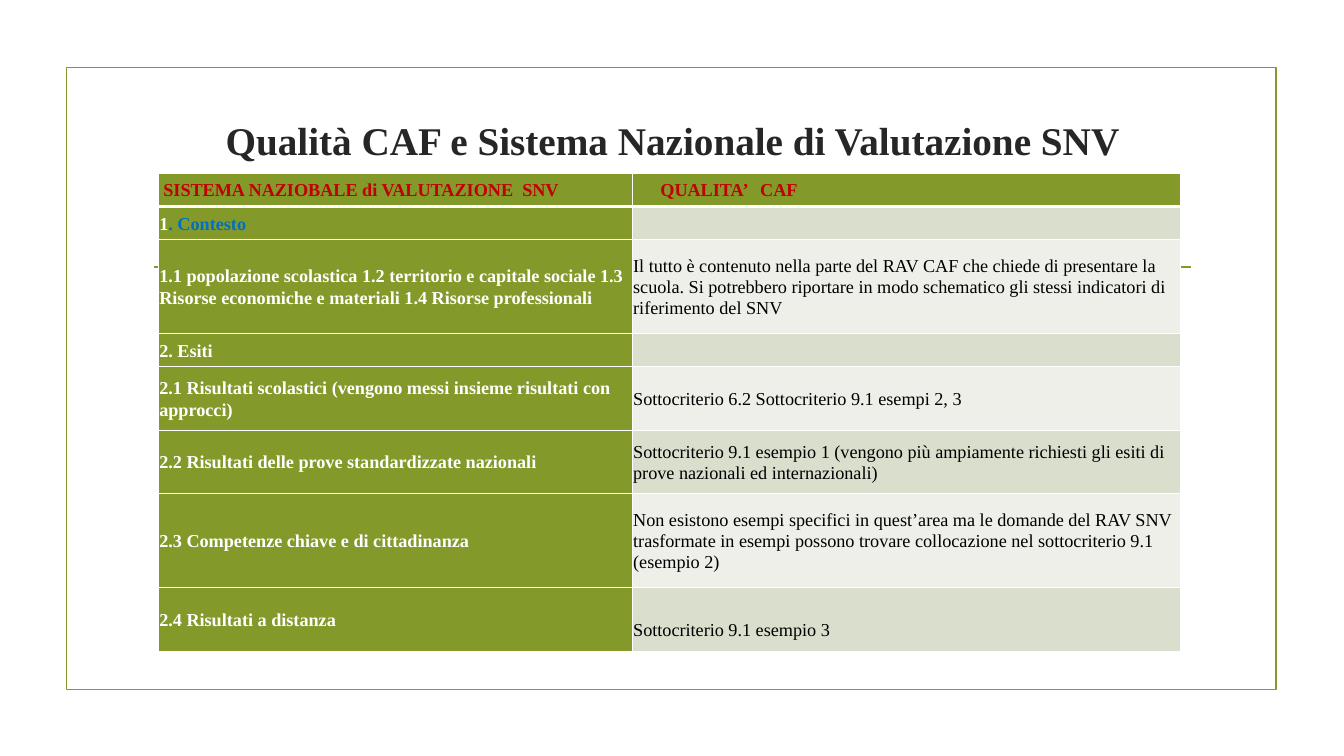
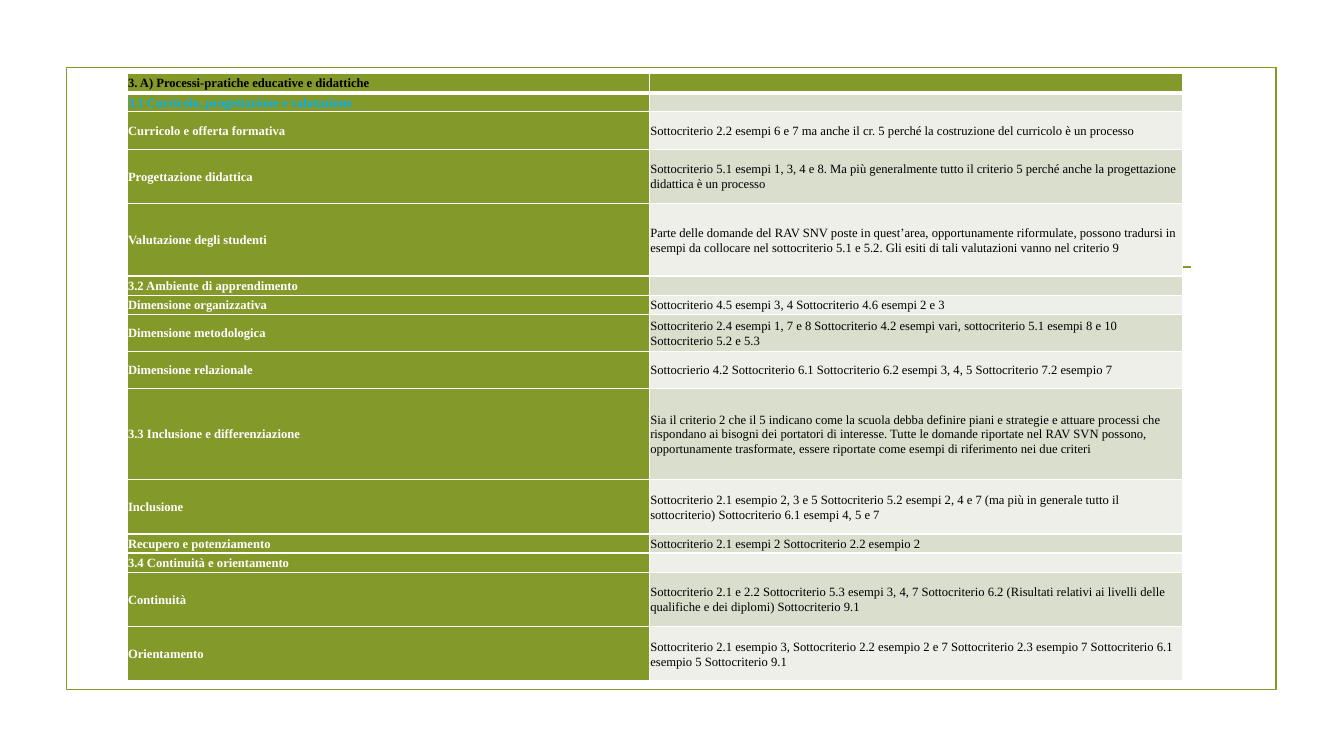
from lxml.etree import SubElement
from pptx import Presentation
from pptx.dml.color import RGBColor
from pptx.enum.shapes import MSO_CONNECTOR, MSO_SHAPE
from pptx.enum.text import MSO_ANCHOR, MSO_AUTO_SIZE, PP_ALIGN
from pptx.oxml.ns import qn
from pptx.util import Inches, Pt

COLORS = {
    "green": "83992A",
    "band_dark": "D9DECD",
    "band_light": "EDEFE8",
    "title": "262626",
    "white": "FFFFFF",
    "black": "000000",
    "red": "C00000",
    "blue": "0070C0",
    "cyan": "00B0F0",
}
FONT = "Times New Roman"
CELL_MARGIN = 0.01
TITLE_ONLY, BLANK = 5, 6

# Each row: height, label, value. A list holds (text, colour) runs.
CONTEXT_ROWS = [
    (0.33, [("SISTEMA NAZIOBALE di VALUTAZIONE\tSNV", "red")], [("QUALITA’\tCAF", "red")]),
    (0.33, [("1", "white"), (". Contesto", "blue")], ""),
    (0.93, "1.1 popolazione scolastica 1.2 territorio e capitale sociale 1.3 Risorse "
           "economiche e materiali 1.4 Risorse professionali",
     "Il tutto è contenuto nella parte del RAV CAF che chiede di presentare la scuola. "
     "Si potrebbero riportare in modo schematico gli stessi indicatori di riferimento del SNV"),
    (0.33, "2. Esiti", ""),
    (0.63, "2.1 Risultati scolastici (vengono messi insieme risultati con approcci)",
     "Sottocriterio 6.2 Sottocriterio 9.1 esempi 2, 3"),
    (0.63, "2.2 Risultati delle prove standardizzate nazionali",
     "Sottocriterio 9.1 esempio 1 (vengono più ampiamente richiesti gli esiti di prove "
     "nazionali ed internazionali)"),
    (0.93, "2.3 Competenze chiave e di cittadinanza",
     "Non esistono esempi specifici in quest’area ma le domande del RAV SNV trasformate in "
     "esempi possono trovare collocazione nel sottocriterio 9.1 (esempio 2)"),
    (0.63, "2.4 Risultati a distanza", "Sottocriterio 9.1 esempio 3"),
]
PROCESS_ROWS = [
    (0.19, [("3. A) Processi-pratiche educative e didattiche", "black")], ""),
    (0.19, [("3.1 Curricolo, progettazione e valutazione", "cyan")], ""),
    (0.37, "Curricolo e offerta formativa",
     "Sottocriterio 2.2 esempi 6 e 7 ma anche il cr. 5 perché la costruzione del curricolo "
     "è un processo"),
    (0.54, "Progettazione didattica",
     "Sottocriterio 5.1 esempi 1, 3, 4 e 8. Ma più generalmente tutto il criterio 5 perché "
     "anche la progettazione didattica è un processo"),
    (0.72, "Valutazione degli studenti",
     "Parte delle domande del RAV SNV poste in quest’area, opportunamente riformulate, "
     "possono tradursi in esempi da collocare nel sottocriterio 5.1 e 5.2. Gli esiti di "
     "tali valutazioni vanno nel criterio 9"),
    (0.19, "3.2 Ambiente di apprendimento", ""),
    (0.19, "Dimensione organizzativa",
     "Sottocriterio 4.5 esempi 3, 4 Sottocriterio 4.6 esempi 2 e 3"),
    (0.37, "Dimensione metodologica",
     "Sottocriterio 2.4 esempi 1, 7 e 8 Sottocriterio 4.2 esempi vari, sottocriterio 5.1 "
     "esempi 8 e 10 Sottocriterio 5.2 e 5.3"),
    (0.37, "Dimensione relazionale",
     "Sottocrierio 4.2 Sottocriterio 6.1 Sottocriterio 6.2 esempi 3, 4, 5 Sottocriterio 7.2 "
     "esempio 7"),
    (0.9, "3.3 Inclusione e differenziazione",
     "Sia il criterio 2 che il 5 indicano come la scuola debba definire piani e strategie e "
     "attuare processi che rispondano ai bisogni dei portatori di interesse. Tutte le domande "
     "riportate nel RAV SVN possono, opportunamente trasformate, essere riportate come esempi "
     "di riferimento nei due criteri"),
    (0.54, "Inclusione",
     "Sottocriterio 2.1 esempio 2, 3 e 5 Sottocriterio 5.2 esempi 2, 4 e 7 (ma più in "
     "generale tutto il sottocriterio) Sottocriterio 6.1 esempi 4, 5 e 7"),
    (0.19, "Recupero e potenziamento",
     "Sottocriterio 2.1 esempi 2 Sottocriterio 2.2 esempio 2"),
    (0.19, "3.4 Continuità e orientamento", ""),
    (0.54, "Continuità",
     "Sottocriterio 2.1 e 2.2 Sottocriterio 5.3 esempi 3, 4, 7 Sottocriterio 6.2 (Risultati "
     "relativi ai livelli delle qualifiche e dei diplomi) Sottocriterio 9.1"),
    (0.54, "Orientamento",
     "Sottocriterio 2.1 esempio 3, Sottocriterio 2.2 esempio 2 e 7 Sottocriterio 2.3 "
     "esempio 7 Sottocriterio 6.1 esempio 5 Sottocriterio 9.1"),
]


def rgb(name):
    return RGBColor.from_string(COLORS[name])


def style_run(run, size, color, bold):
    font = run.font
    font.name, font.size, font.bold = FONT, Pt(size), bold
    font.color.rgb = rgb(color)


def style_line(line):
    line.color.rgb = rgb("green")
    line.width = Pt(1.25)


def add_framed_slide(presentation, layout_index):
    slide = presentation.slides.add_slide(presentation.slide_layouts[layout_index])
    frame = slide.shapes.add_shape(
        MSO_SHAPE.RECTANGLE, Inches(0.66), Inches(0.67), Inches(12), Inches(6.17))
    frame.shadow.inherit = False
    frame.fill.background()
    style_line(frame.line)
    rule = slide.shapes.add_connector(
        MSO_CONNECTOR.STRAIGHT, Inches(1.53), Inches(2.65), Inches(11.81), Inches(2.65))
    style_line(rule.line)
    SubElement(rule._element.spPr, qn("a:effectLst"))
    return slide


def set_title(slide, text):
    title = slide.shapes.title
    title.left, title.top = Inches(1.42), Inches(1.07)
    title.width, title.height = Inches(10.5), Inches(0.64)
    text_frame = title.text_frame
    text_frame.text = text
    text_frame.auto_size = MSO_AUTO_SIZE.NONE
    text_frame.vertical_anchor = MSO_ANCHOR.MIDDLE
    paragraph = text_frame.paragraphs[0]
    paragraph.alignment = PP_ALIGN.CENTER
    style_run(paragraph.runs[0], 28, "title", True)


def set_borders(cell, top, bottom):
    properties = cell._tc.get_or_add_tcPr()
    for side, width in (("L", 1), ("R", 1), ("T", top), ("B", bottom)):
        line = SubElement(properties, qn(f"a:ln{side}"), w=str(Pt(width)))
        fill = SubElement(line, qn("a:solidFill"))
        SubElement(fill, qn("a:srgbClr"), val=COLORS["white"])


def fill_cell(cell, content, size, color, bold):
    cell.vertical_anchor = MSO_ANCHOR.MIDDLE
    cell.margin_left = cell.margin_right = Inches(CELL_MARGIN)
    cell.margin_top = cell.margin_bottom = Inches(CELL_MARGIN)
    paragraph = cell.text_frame.paragraphs[0]
    paragraph.line_spacing = 1.07
    if not content:
        # Keeps the empty line from stretching a low row
        SubElement(paragraph._p, qn("a:endParaRPr"), sz=str(size * 100))
        return
    for text, run_color in [(content, color)] if isinstance(content, str) else content:
        run = paragraph.add_run()
        run.text = text
        style_run(run, size, run_color, bold)


def indent_with_tab(cell, indent, tab):
    cell.margin_left = Inches(indent)
    properties = cell.text_frame.paragraphs[0]._p.get_or_add_pPr()
    tabs = SubElement(properties, qn("a:tabLst"))
    SubElement(tabs, qn("a:tab"), pos=str(Inches(tab)), algn="l")


def add_criteria_table(slide, rows, left, top, widths, size):
    height = sum(row[0] for row in rows)
    table = slide.shapes.add_table(
        len(rows), len(widths), Inches(left), Inches(top),
        Inches(sum(widths)), Inches(height)).table
    for column, width in zip(table.columns, widths):
        column.width = Inches(width)
    for index, (row_height, label, value) in enumerate(rows):
        table.rows[index].height = Inches(row_height)
        header = index == 0
        band = "green" if header else "band_dark" if index % 2 else "band_light"
        label_cell, value_cell = table.cell(index, 0), table.cell(index, 1)
        fill_cell(label_cell, label, size, "white", True)
        fill_cell(value_cell, value, size, "black", header)
        for cell, fill in ((label_cell, "green"), (value_cell, band)):
            set_borders(cell, top=3 if index == 1 else 1, bottom=3 if header else 1)
            cell.fill.solid()
            cell.fill.fore_color.rgb = rgb(fill)
    return table


def main():
    presentation = Presentation()
    presentation.slide_width, presentation.slide_height = Inches(13.33), Inches(7.5)

    context_slide = add_framed_slide(presentation, TITLE_ONLY)
    set_title(context_slide, "Qualità CAF e Sistema Nazionale di Valutazione SNV")
    table = add_criteria_table(context_slide, CONTEXT_ROWS, 1.57, 1.72, (4.7, 5.44), 13)
    indent_with_tab(table.cell(0, 0), 0.05, 3.56)
    indent_with_tab(table.cell(0, 1), 0.28, 0.99)
    table.cell(len(CONTEXT_ROWS) - 1, 1).margin_top = Inches(0.22)

    process_slide = add_framed_slide(presentation, BLANK)
    add_criteria_table(process_slide, PROCESS_ROWS, 1.26, 0.73, (5.18, 5.29), 9)

    presentation.save("out.pptx")


if __name__ == "__main__":
    main()
